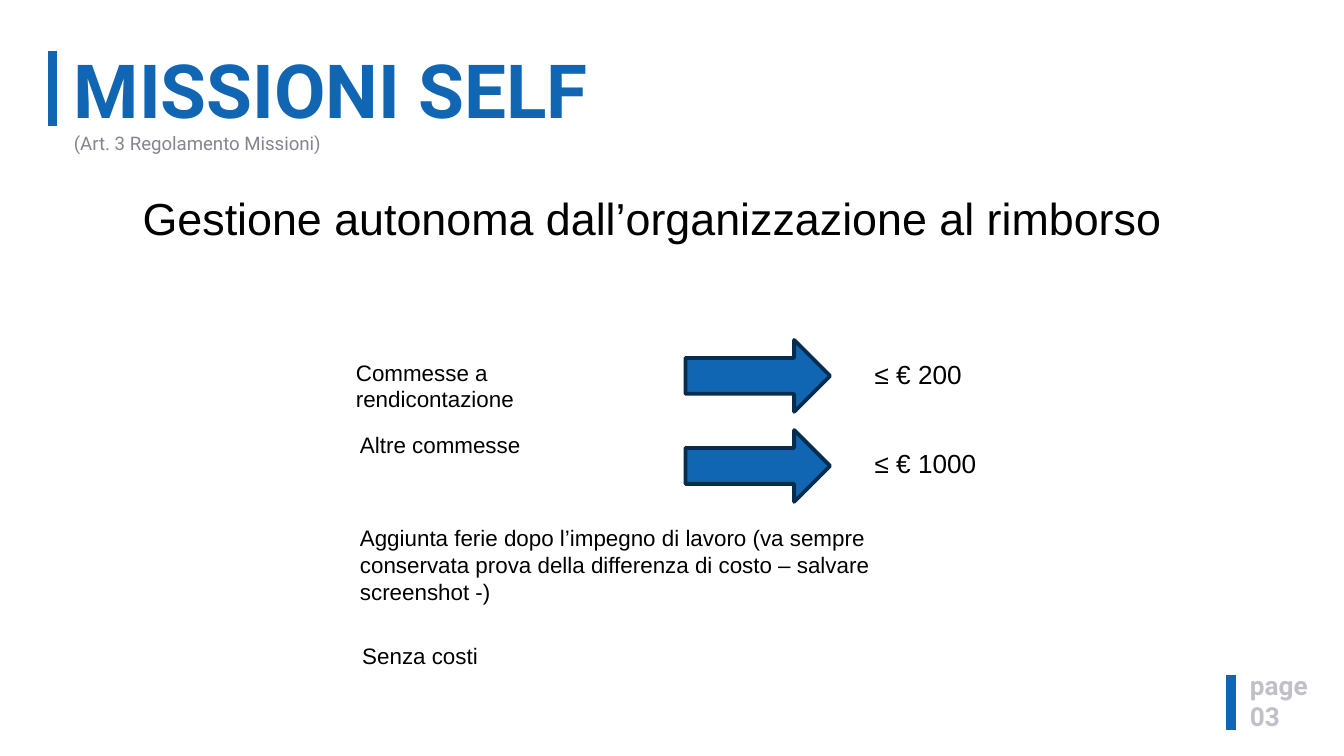
from pptx import Presentation
from pptx.dml.color import RGBColor
from pptx.enum.shapes import MSO_CONNECTOR, MSO_SHAPE
from pptx.enum.text import MSO_ANCHOR, PP_ALIGN
from pptx.util import Pt
from lxml.etree import SubElement
from pptx.oxml.ns import qn

COLORS = {"blue": "1166B3", "navy": "072D4E", "gray": "858591",
          "pale": "C0C0C8", "black": "000000"}

# Content
TITLE = "MISSIONI SELF"
SUBTITLE = "(Art. 3 Regolamento Missioni)"
PAGE_LABEL = ["page", "03"]
HEADLINE = "Gestione autonoma dall’organizzazione al rimborso"

# Text, left, top, width, height
EXPENSE_TEXTS = [
    ("Commesse a rendicontazione", 183.6, 188.64, 172.8, 21.6),
    ("Altre commesse", 185.76, 227.5, 108.7, 21.6),
    ("Aggiunta ferie dopo l’impegno di lavoro (va sempre conservata prova "
     "della differenza di costo – salvare screenshot -)",
     185.76, 277.2, 326.2, 65.5),
    ("Senza costi", 187, 340.56, 326.2, 21.6),
]
# Text, top of text, top of arrow
LIMITS = [("≤ € 200", 188.64, 182.16), ("≤ € 1000", 236.2, 230.4)]
# Left, top, bottom
ACCENT_BARS = [(28.08, 27.36, 67.68), (659.52, 361.44, 390.96)]


def color(name):
    return RGBColor.from_string(COLORS[name])


def add_run(paragraph, text, size, color_name, font="Arial", bold=False):
    run = paragraph.add_run()
    run.text = text
    run.font.size = Pt(size)
    run.font.name = font
    run.font.bold = bold
    run.font.color.rgb = color(color_name)


def add_box(slide, left, top, width, height, wrap=True, tight=False):
    box = slide.shapes.add_textbox(Pt(left), Pt(top), Pt(width), Pt(height))
    frame = box.text_frame
    frame.word_wrap = wrap
    frame.vertical_anchor = MSO_ANCHOR.TOP
    if tight:
        frame.margin_left = frame.margin_right = Pt(3.6)
        frame.margin_top = frame.margin_bottom = Pt(1.44)
    return frame


presentation = Presentation()
presentation.slide_width = Pt(720)
presentation.slide_height = Pt(405)
slide = presentation.slides.add_slide(presentation.slide_layouts[6])

# Accent bars
for left, top, bottom in ACCENT_BARS:
    bar = slide.shapes.add_connector(
        MSO_CONNECTOR.STRAIGHT, Pt(left), Pt(top), Pt(left), Pt(bottom))
    bar.line.color.rgb = color("blue")
    bar.line.width = Pt(5)
    SubElement(bar._element.spPr, qn("a:effectLst"))

# Title and subtitle
paragraph = add_box(slide, 36, 27.36, 578.9, 58.3, tight=True).paragraphs[0]
paragraph.line_spacing = 0.9
add_run(paragraph, TITLE, 40, "blue", "Roboto", True)
paragraph.add_line_break()
add_run(paragraph, SUBTITLE, 10, "gray", "Roboto")

# Page number
frame = add_box(slide, 666, 357.1, 54, 37.4, tight=True)
for index, text in enumerate(PAGE_LABEL):
    paragraph = frame.add_paragraph() if index else frame.paragraphs[0]
    add_run(paragraph, text, 14, "pale", "Roboto", True)

# Headline
paragraph = add_box(slide, 65.5, 98.64, 567.4, 36).paragraphs[0]
paragraph.alignment = PP_ALIGN.CENTER
add_run(paragraph, HEADLINE, 24, "black")

# Expense types
for text, *area in EXPENSE_TEXTS:
    add_run(add_box(slide, *area).paragraphs[0], text, 12, "black")

# Limits and their arrows
for text, text_top, arrow_top in LIMITS:
    frame = add_box(slide, 461.5, text_top, 69, 24.5, wrap=False)
    add_run(frame.paragraphs[0], text, 14, "black")
    arrow = slide.shapes.add_shape(
        MSO_SHAPE.RIGHT_ARROW, Pt(367.2), Pt(arrow_top), Pt(77.5), Pt(38.5))
    arrow.shadow.inherit = False
    arrow.fill.solid()
    arrow.fill.fore_color.rgb = color("blue")
    arrow.line.color.rgb = color("navy")
    arrow.line.width = Pt(2)

presentation.save("out.pptx")
